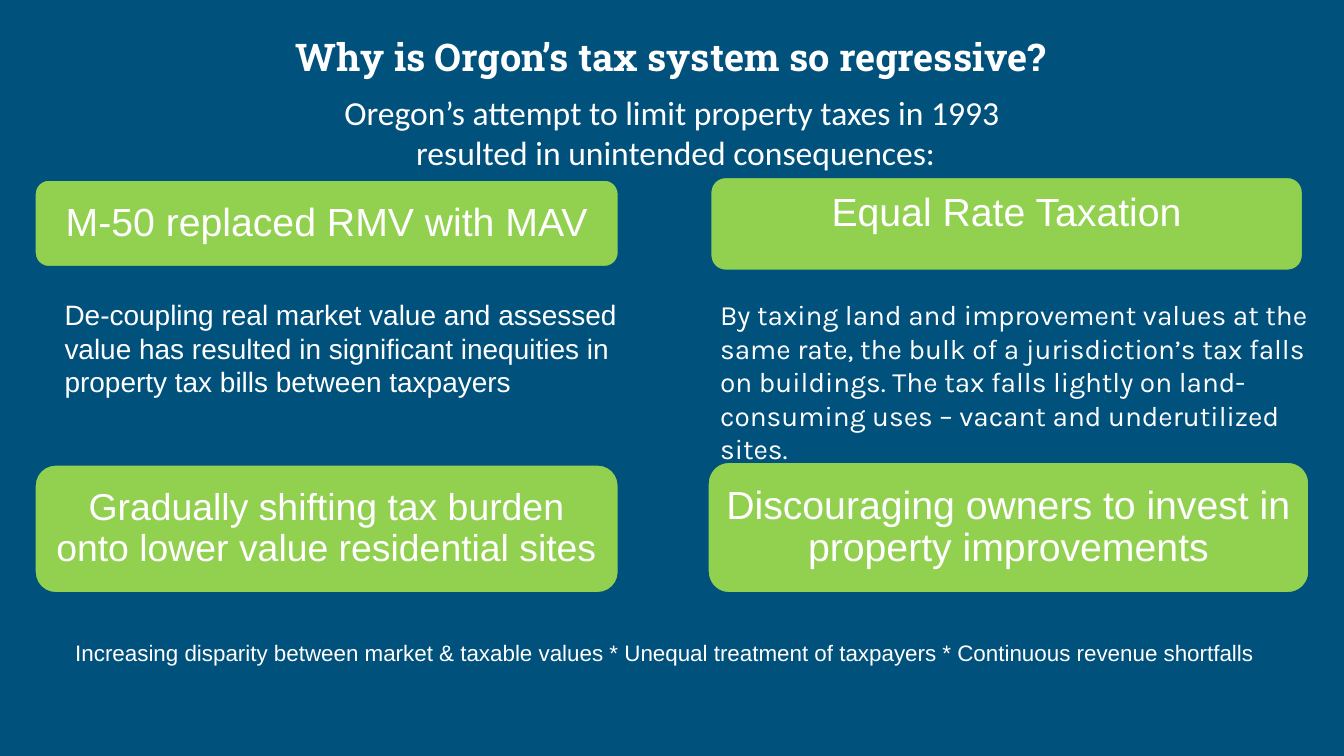
"""Build the slide on why the tax system is regressive."""
from pptx import Presentation
from pptx.dml.color import RGBColor
from pptx.enum.shapes import MSO_SHAPE
from pptx.enum.text import MSO_ANCHOR, MSO_AUTO_SIZE, PP_ALIGN
from pptx.util import Cm, Pt

ROUNDED = MSO_SHAPE.ROUNDED_RECTANGLE
TOP, MIDDLE = MSO_ANCHOR.TOP, MSO_ANCHOR.MIDDLE
LEFT, CENTER = PP_ALIGN.LEFT, PP_ALIGN.CENTER
NO_FIT = MSO_AUTO_SIZE.NONE
COLORS = {"background": "00517C", "card": "92D050", "text": "FFFFFF"}


def color(name):
    return RGBColor.from_string(COLORS[name])


def write(shape, text, size, font="Arial", align=CENTER, anchor=TOP,
          bold=False, spacing=1.0, inset_x=0.25, inset_y=0.13):
    frame = shape.text_frame
    frame.word_wrap = True
    frame.auto_size = NO_FIT
    frame.vertical_anchor = anchor
    frame.margin_left = frame.margin_right = Cm(inset_x)
    frame.margin_top = frame.margin_bottom = Cm(inset_y)
    frame.text = text
    paragraph = frame.paragraphs[0]
    paragraph.alignment = align
    paragraph.line_spacing = spacing
    paragraph.font.name = font
    paragraph.font.size = Pt(size)
    paragraph.font.bold = bold
    paragraph.font.color.rgb = color("text")


deck = Presentation()
deck.slide_width, deck.slide_height = Cm(25.4), Cm(14.28)
slide = deck.slides.add_slide(deck.slide_layouts[5])
slide.background.fill.solid()
slide.background.fill.fore_color.rgb = color("background")

title = slide.shapes.title
title.left, title.top, title.width, title.height = Cm(5.03), Cm(0.48), Cm(15.3), Cm(1.27)
write(title, "Why is Orgon’s tax system so regressive?", 20.4, font="Roboto Slab",
      bold=True, spacing=0.9, inset_y=0.25)

cards = [
    ("M-50 replaced RMV with MAV", 21, MIDDLE, 0.9, (0.64, 3.38, 11.07, 1.68)),
    ("Gradually shifting tax burden onto lower value residential sites", 20, MIDDLE, 0.9,
     (0.64, 8.76, 11.07, 2.46)),
    ("Equal Rate Taxation", 21, TOP, 1.0, (13.41, 3.33, 11.23, 1.8)),
    ("Discouraging owners to invest in property improvements", 21, MIDDLE, 0.9,
     (13.36, 8.71, 11.4, 2.51)),
]
for label, size, anchor, spacing, place in cards:
    card = slide.shapes.add_shape(ROUNDED, *map(Cm, place))
    card.shadow.inherit = False
    card.fill.solid()
    card.fill.fore_color.rgb = color("card")
    card.line.color.rgb = color("background")
    card.line.width = Pt(2)
    write(card, label, size, anchor=anchor, spacing=spacing, inset_x=0.2)

passages = [
    ("Oregon’s attempt to limit property taxes in 1993 \vresulted in unintended consequences:",
     18, "Calibri", CENTER, (5.23, 1.6, 15.09, 1.8)),
    ("De-coupling real market value and assessed value has resulted in significant "
     "inequities in property tax bills between taxpayers",
     15, "Arial", LEFT, (0.97, 5.49, 11.81, 2.18)),
    ("By taxing land and improvement values at the same rate, the bulk of a jurisdiction’s "
     "tax falls on buildings. The tax falls lightly on land-consuming uses – vacant and "
     "underutilized sites.",
     15, "Karla", LEFT, (13.36, 5.49, 11.81, 2.82)),
    ("Increasing disparity between market & taxable values * Unequal treatment of taxpayers "
     "* Continuous revenue shortfalls ",
     12, "Arial", CENTER, (0.48, 11.94, 24.31, 0.76)),
]
for text, size, font, align, place in passages:
    passage = slide.shapes.add_textbox(*map(Cm, place))
    write(passage, text, size, font=font, align=align)

deck.save("out.pptx")
